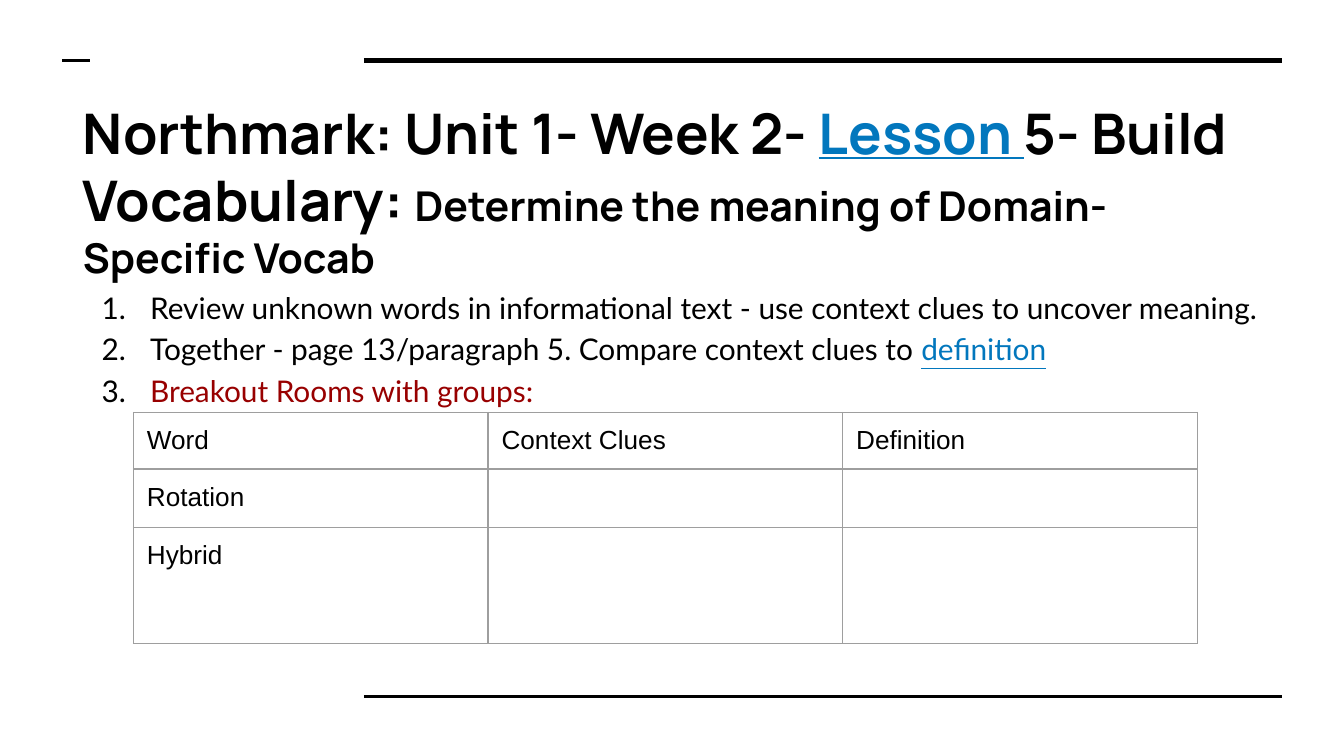
from typing import NamedTuple

from lxml.etree import SubElement
from pptx import Presentation
from pptx.dml.color import RGBColor
from pptx.enum.shapes import MSO_CONNECTOR
from pptx.enum.text import MSO_ANCHOR, MSO_AUTO_SIZE, PP_ALIGN
from pptx.oxml.ns import qn
from pptx.util import Pt

BLACK, BLUE, RED, GREY = "000000", "0277BD", "980000", "9E9E9E"
INSET = 7.2
CELL_SIZE = 14


class Rule(NamedTuple):
    left: float
    right: float
    y: float
    weight: float


class Run(NamedTuple):
    text: str
    size: float
    color: str = BLACK
    underline: bool = False


RULES = [
    Rule(195, 687, 32.5, 3),
    Rule(195, 687, 373, 1.5),
    Rule(33.5, 48, 32.5, 1.5),
]
TITLE = [
    Run("Northmark: Unit 1- Week 2- ", 30),
    Run("Lesson ", 30, BLUE, True),
    Run("5- Build Vocabulary: ", 30),
    Run("Determine the meaning of Domain- Specific Vocab", 22),
]
STEPS = [
    [Run("Review unknown words in informational text - use context clues "
         "to uncover meaning.", 16)],
    [Run("Together - page 13/paragraph 5. Compare context clues to ", 16),
     Run("definition", 16, BLUE, True)],
    [Run("Breakout Rooms with groups:", 16, RED)],
]
COLUMN_WIDTH = 190
ROW_HEIGHTS = [30.25, 30.25, 62]
CELLS = [
    ["Word", "Context Clues", "Definition"],
    ["Rotation", "", ""],
    ["Hybrid", "", ""],
]


def rgb(color: str) -> RGBColor:
    return RGBColor.from_string(color)


def add_text(p, text: str, *, size: float, font: str, color: str = BLACK,
             bold: bool = False, underline: bool = False) -> None:
    r = p.add_run()
    r.text = text
    r.font.size, r.font.name = Pt(size), font
    r.font.bold, r.font.underline = bold, underline
    r.font.color.rgb = rgb(color)


def add_runs(p, runs: list[Run], font: str, bold: bool = False) -> None:
    p.alignment = PP_ALIGN.LEFT
    p.space_before = Pt(0)
    for run in runs:
        add_text(p, run.text, size=run.size, font=font, color=run.color,
                 bold=bold, underline=run.underline)


def place(sp, left: float, top: float, width: float, height: float):
    """Move a placeholder and return its top-anchored text frame."""
    sp.left, sp.top, sp.width, sp.height = map(Pt, (left, top, width, height))
    tf = sp.text_frame
    tf.word_wrap, tf.auto_size = True, MSO_AUTO_SIZE.NONE
    tf.vertical_anchor = MSO_ANCHOR.TOP
    tf.margin_left = tf.margin_right = Pt(INSET)
    tf.margin_top = tf.margin_bottom = Pt(INSET)
    return tf


def add_rule(s, rule: Rule) -> None:
    line = s.shapes.add_connector(MSO_CONNECTOR.STRAIGHT, Pt(rule.left), Pt(rule.y),
                                  Pt(rule.right), Pt(rule.y))
    line.line.color.rgb = rgb(BLACK)
    line.line.width = Pt(rule.weight)
    SubElement(line._element.spPr, qn("a:effectLst"))


def number(p) -> None:
    pPr = p._p.get_or_add_pPr()
    pPr.set("marL", str(Pt(36)))
    pPr.set("indent", str(Pt(-26)))
    color = SubElement(SubElement(pPr, qn("a:buClr")), qn("a:srgbClr"))
    color.set("val", BLACK)
    SubElement(pPr, qn("a:buFont")).set("typeface", "Lato")
    SubElement(pPr, qn("a:buAutoNum")).set("type", "arabicPeriod")


def fill_cell(cell, text: str) -> None:
    cell.margin_left = cell.margin_right = Pt(INSET)
    cell.margin_top = cell.margin_bottom = Pt(INSET)
    p = cell.text_frame.paragraphs[0]
    if text:
        add_text(p, text, size=CELL_SIZE, font="Arial")
    else:  # keep an empty cell from stretching its row
        SubElement(p._p, qn("a:endParaRPr"), sz=str(CELL_SIZE * 100))
    tcPr = cell._tc.get_or_add_tcPr()
    for side in ("lnL", "lnR", "lnT", "lnB"):
        border = SubElement(tcPr, qn(f"a:{side}"), w=str(Pt(0.75)))
        fill = SubElement(border, qn("a:solidFill"))
        SubElement(fill, qn("a:srgbClr"), val=GREY)
    cell.fill.background()


def add_grid(s, left: float, top: float) -> None:
    frame = s.shapes.add_table(len(CELLS), len(CELLS[0]), Pt(left), Pt(top),
                               Pt(COLUMN_WIDTH * len(CELLS[0])), Pt(sum(ROW_HEIGHTS)))
    table = frame.table
    table.first_row = table.horz_banding = False
    for column in table.columns:
        column.width = Pt(COLUMN_WIDTH)
    for i, height in enumerate(ROW_HEIGHTS):
        table.rows[i].height = Pt(height)
        for j, text in enumerate(CELLS[i]):
            fill_cell(table.cell(i, j), text)


def main() -> None:
    prs = Presentation()
    prs.slide_width, prs.slide_height = Pt(720), Pt(405)
    s = prs.slides.add_slide(prs.slide_layouts[1])
    title, body = s.shapes.title, s.placeholders[1]

    # Decorative rules
    for rule in RULES:
        add_rule(s, rule)

    # Title
    tf = place(title, 37.25, 45.5, 649.5, 49.5)
    add_runs(tf.paragraphs[0], TITLE, "Manrope", bold=True)

    # Numbered steps
    tf = place(body, 37.25, 145.25, 672, 235.5)
    for i, step in enumerate(STEPS):
        p = tf.add_paragraph() if i else tf.paragraphs[0]
        add_runs(p, step, "Lato")
        p.line_spacing = 1.15
        number(p)

    # Vocabulary table
    add_grid(s, 71.5, 221)

    prs.save("out.pptx")


if __name__ == "__main__":
    main()
